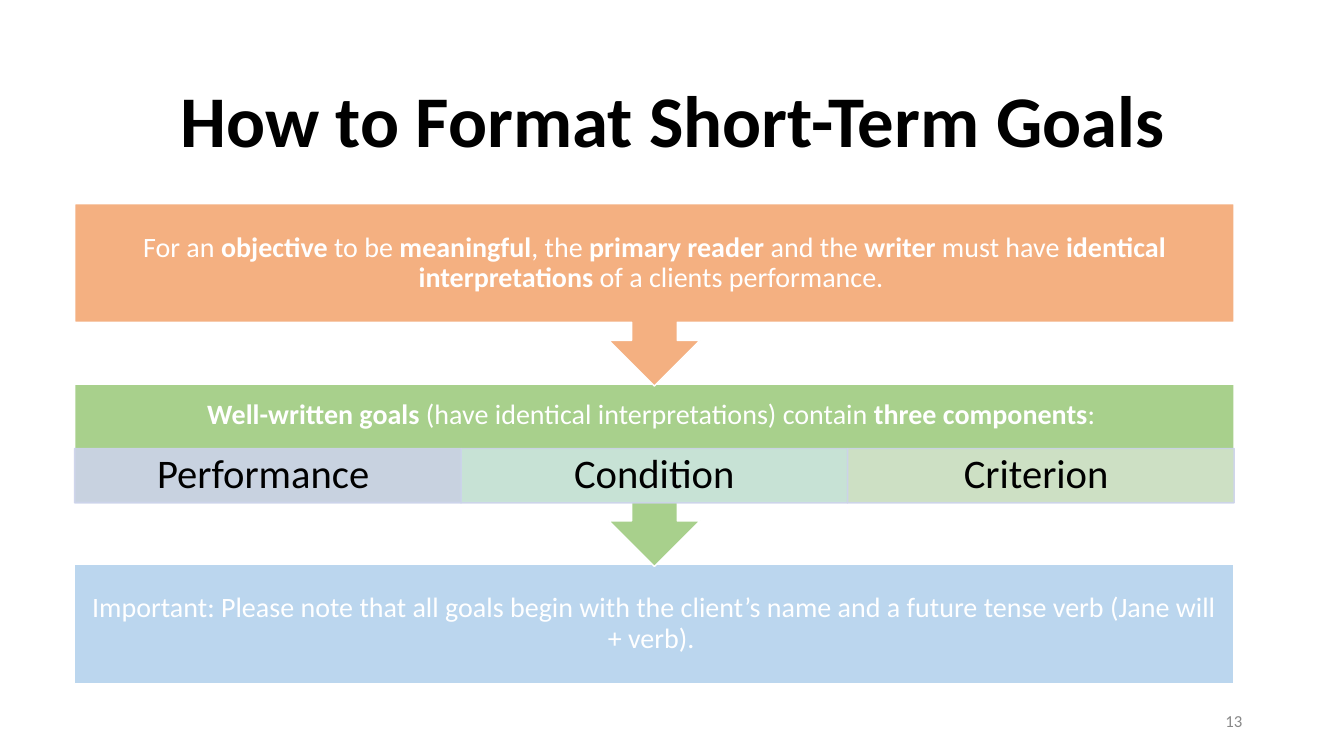
from dataclasses import dataclass

from lxml import etree
from pptx import Presentation
from pptx.dml.color import RGBColor
from pptx.enum.shapes import MSO_SHAPE
from pptx.enum.text import MSO_ANCHOR, PP_ALIGN
from pptx.oxml.ns import qn
from pptx.shapes.autoshape import Shape
from pptx.slide import Slide
from pptx.util import Inches, Pt

WHITE = RGBColor(0xFF, 0xFF, 0xFF)
BLACK = RGBColor(0x00, 0x00, 0x00)
GRAY = RGBColor(0x88, 0x88, 0x88)
ORANGE = RGBColor(0xF4, 0xB0, 0x81)
GREEN = RGBColor(0xA8, 0xD0, 0x8C)
BLUE = RGBColor(0xBB, 0xD6, 0xEE)
LAVENDER = RGBColor(0xCC, 0xD3, 0xEA)
MINT = RGBColor(0xCB, 0xE5, 0xDE)
SAGE = RGBColor(0xD2, 0xE2, 0xCB)

FONT = "Calibri"
LEFT, WIDTH = 0.74, 11.5
CALLOUT_HEIGHT = 1.81
COMPONENT_TOP, COMPONENT_HEIGHT = 4.45, 0.54


@dataclass(frozen=True)
class Box:
    left: float
    top: float
    width: float
    height: float

    def lengths(self) -> tuple[Inches, Inches, Inches, Inches]:
        return Inches(self.left), Inches(self.top), Inches(self.width), Inches(self.height)


@dataclass(frozen=True)
class TextStyle:
    size: float
    color: RGBColor
    inset_x: float
    inset_y: float
    align: PP_ALIGN = PP_ALIGN.CENTER
    spacing: float = 0.9
    bold: bool | None = None


@dataclass(frozen=True)
class Step:
    top: float
    caption_height: float
    fill: RGBColor
    caption: str


@dataclass(frozen=True)
class Component:
    label: str
    fill: RGBColor


TITLE_STYLE = TextStyle(52, BLACK, 0.1, 0.05, bold=True)
STEP_STYLE = TextStyle(20, WHITE, 0.16, 0.16)
COMPONENT_STYLE = TextStyle(29, BLACK, 0.23, 0.04)
NUMBER_STYLE = TextStyle(12, GRAY, 0.1, 0.05, PP_ALIGN.RIGHT, 1.0)

NOTE = ("Important: Please note that all goals begin with the client’s name "
        "and a future tense verb (Jane will + verb). ")
STEPS = [
    Step(3.81, 0.63, GREEN,
         "*Well-written goals *(have identical interpretations) contain *three components*: "),
    Step(2.02, 1.18, ORANGE,
         "For an *objective* to be *meaningful*, the *primary reader *and the *writer* "
         "must have *identical interpretations *of a clients performance. "),
]
COMPONENTS = [
    Component("Performance ", LAVENDER),
    Component("Condition", MINT),
    Component("Criterion ", SAGE),
]


def write(shape: Shape, text: str, style: TextStyle) -> None:
    """Set text in which asterisks enclose the bold passages."""
    frame = shape.text_frame
    frame.word_wrap = True
    frame.vertical_anchor = MSO_ANCHOR.MIDDLE
    frame.margin_left = frame.margin_right = Inches(style.inset_x)
    frame.margin_top = frame.margin_bottom = Inches(style.inset_y)
    paragraph = frame.paragraphs[0]
    paragraph.alignment = style.align
    paragraph.line_spacing = style.spacing
    font = paragraph.font
    font.name, font.size, font.bold = FONT, Pt(style.size), style.bold
    font.color.rgb = style.color
    for index, passage in enumerate(text.split("*")):
        if passage:
            run = paragraph.add_run()
            run.text = passage
            if index % 2:
                run.font.bold = True


def add_text(slide: Slide, box: Box, text: str, style: TextStyle) -> None:
    write(slide.shapes.add_textbox(*box.lengths()), text, style)


def add_block(slide: Slide, kind: MSO_SHAPE, box: Box, fill: RGBColor, line: RGBColor) -> Shape:
    block = slide.shapes.add_shape(kind, *box.lengths())
    block.shadow.inherit = False
    block.fill.solid()
    block.fill.fore_color.rgb = fill
    block.line.color.rgb = line
    block.line.width = Pt(1)
    return block


def set_opacity(shape: Shape, percent: int) -> None:
    for color in shape.element.spPr.iter(qn("a:srgbClr")):
        etree.SubElement(color, qn("a:alpha")).set("val", str(percent * 1000))


def add_step(slide: Slide, step: Step) -> None:
    callout = add_block(slide, MSO_SHAPE.UP_ARROW_CALLOUT,
                        Box(LEFT, step.top, WIDTH, CALLOUT_HEIGHT), step.fill, WHITE)
    callout.rotation = 180
    for index, value in enumerate((0.25, 0.25, 0.25, 0.65)):
        callout.adjustments[index] = value
    add_text(slide, Box(LEFT, step.top, WIDTH, step.caption_height), step.caption, STEP_STYLE)


def add_components(slide: Slide) -> None:
    width = WIDTH / len(COMPONENTS)
    for column, component in enumerate(COMPONENTS):
        box = Box(LEFT + column * width, COMPONENT_TOP, width, COMPONENT_HEIGHT)
        cell = add_block(slide, MSO_SHAPE.RECTANGLE, box, component.fill, LAVENDER)
        set_opacity(cell, 90)
        write(cell, component.label, COMPONENT_STYLE)


def main() -> None:
    deck = Presentation()
    deck.slide_width, deck.slide_height = Inches(13.33), Inches(7.5)
    slide = deck.slides.add_slide(deck.slide_layouts[5])

    title = slide.shapes.title
    title.left, title.top, title.width, title.height = Box(0.92, 0.61, 11.5, 1.24).lengths()
    write(title, "How to Format Short-Term Goals", TITLE_STYLE)

    note = add_block(slide, MSO_SHAPE.RECTANGLE, Box(LEFT, 5.6, WIDTH, 1.18), BLUE, WHITE)
    write(note, NOTE, STEP_STYLE)
    for step in STEPS:
        add_step(slide, step)
    add_components(slide)
    add_text(slide, Box(9.42, 6.95, 3, 0.4), "13", NUMBER_STYLE)

    deck.save("out.pptx")


if __name__ == "__main__":
    main()
